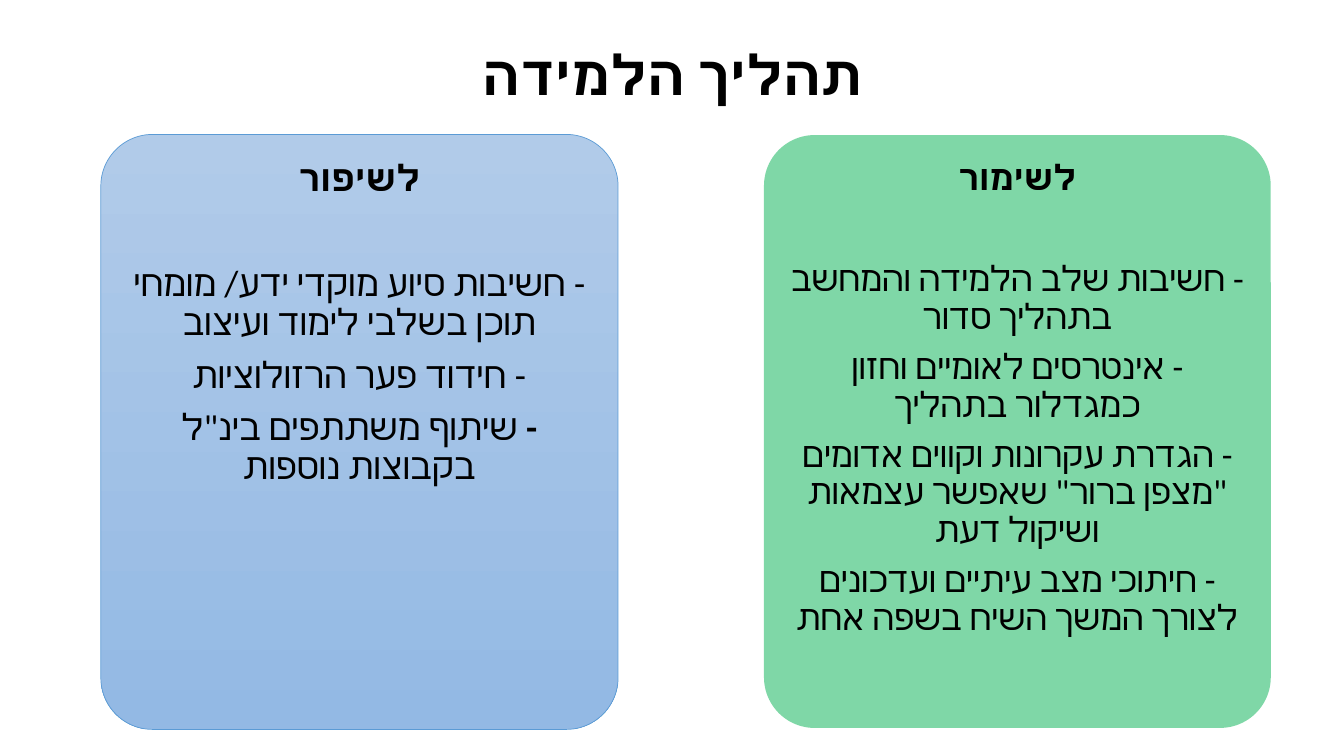
import pptx
import pptx.dml.color
import pptx.enum.shapes
import pptx.enum.text
import pptx.oxml.ns
import pptx.util
from lxml import etree

Pt = pptx.util.Pt
qn = pptx.oxml.ns.qn


def rgb(value):
    return pptx.dml.color.RGBColor.from_string(value)


class Deck:
    """Holds the text style and the current slide, and draws right-to-left elements."""

    font = "Calibri"
    ink = "000000"

    def __init__(self, width, height):
        self.prs = pptx.Presentation()
        self.prs.slide_width, self.prs.slide_height = Pt(width), Pt(height)
        self.s = self.prs.slides.add_slide(self.prs.slide_layouts[5])

    def frame(self, sp, inset, anchor):
        tf = sp.text_frame
        tf.word_wrap = True
        tf.auto_size = pptx.enum.text.MSO_AUTO_SIZE.NONE
        tf.vertical_anchor = anchor
        tf.margin_left = tf.margin_right = tf.margin_top = tf.margin_bottom = Pt(inset)
        return tf

    def paragraph(self, p, bold, regular, size, after=0):
        p.text = bold or regular
        if bold and regular:
            p.add_run().text = regular
        p.alignment = pptx.enum.text.PP_ALIGN.CENTER
        p.line_spacing = 0.9
        p.space_before, p.space_after = Pt(0), Pt(after)
        p._p.get_or_add_pPr().set("rtl", "1")
        for r in p.runs:
            r.font.size, r.font.name = Pt(size), self.font
            r.font.bold = r.text == bold
            r.font.color.rgb = rgb(self.ink)
            etree.SubElement(r._r.rPr, qn("a:cs"), typeface=self.font)

    def title(self, text, box, size):
        sp = self.s.shapes.title
        sp.left, sp.top, sp.width, sp.height = map(Pt, box)
        tf = self.frame(sp, 4, pptx.enum.text.MSO_ANCHOR.MIDDLE)
        self.paragraph(tf.paragraphs[0], text, "", size)

    def card(self, heading, items, box, size, inset):
        sp = self.s.shapes.add_shape(
            pptx.enum.shapes.MSO_SHAPE.ROUNDED_RECTANGLE, *map(Pt, box))
        sp.adjustments[0] = 0.1
        sp.shadow.inherit = False
        sp.line.fill.background()
        tf = self.frame(sp, inset, pptx.enum.text.MSO_ANCHOR.TOP)
        self.paragraph(tf.paragraphs[0], heading, "", size, 1.8 * size)
        for bold, regular in items:
            self.paragraph(tf.add_paragraph(), bold, regular, size, 0.35 * size)
        return sp

    def gradient(self, sp, top, bottom):
        sp.fill.gradient()
        sp.fill.gradient_angle = 270
        for stop, color in zip(sp.fill.gradient_stops, (top, bottom)):
            stop.color.rgb = rgb(color)

    def outline(self, sp, color, width):
        sp.line.color.rgb = rgb(color)
        sp.line.width = Pt(width)

    def tint(self, sp, color, percent):
        sp.fill.solid()
        sp.fill.fore_color.rgb = rgb(color)
        clr = sp._element.spPr.find(qn("a:solidFill")).find(qn("a:srgbClr"))
        etree.SubElement(clr, qn("a:alpha"), val=str(percent * 1000))


def main():
    deck = Deck(960, 540)
    deck.title("תהליך הלמידה", (42, 29, 877, 53), 39.6)

    improve = deck.card("לשיפור", [
        ("", "- חשיבות סיוע מוקדי ידע/ מומחי תוכן בשלבי לימוד ועיצוב"),
        ("", "- חידוד פער הרזולוציות"),
        ("- ", "שיתוף משתתפים בינ\"ל בקבוצות נוספות"),
    ], (72, 96, 369.5, 425), 26, 7.8)
    deck.gradient(improve, "B1CBE9", "93B9E4")
    deck.outline(improve, "5B9BD5", 0.5)

    keep = deck.card("לשימור", [
        ("", "- חשיבות שלב הלמידה והמחשב בתהליך סדור"),
        ("", "- אינטרסים לאומיים וחזון כמגדלור בתהליך"),
        ("", "- הגדרת עקרונות וקווים אדומים \"מצפן ברור\" שאפשר עצמאות ושיקול דעת"),
        ("", "- חיתוכי מצב עיתיים ועדכונים לצורך המשך השיח בשפה אחת"),
    ], (545.7, 96.5, 362, 423.5), 25, 7.5)
    deck.tint(keep, "00B050", 50)

    deck.prs.save("out.pptx")


if __name__ == "__main__":
    main()
